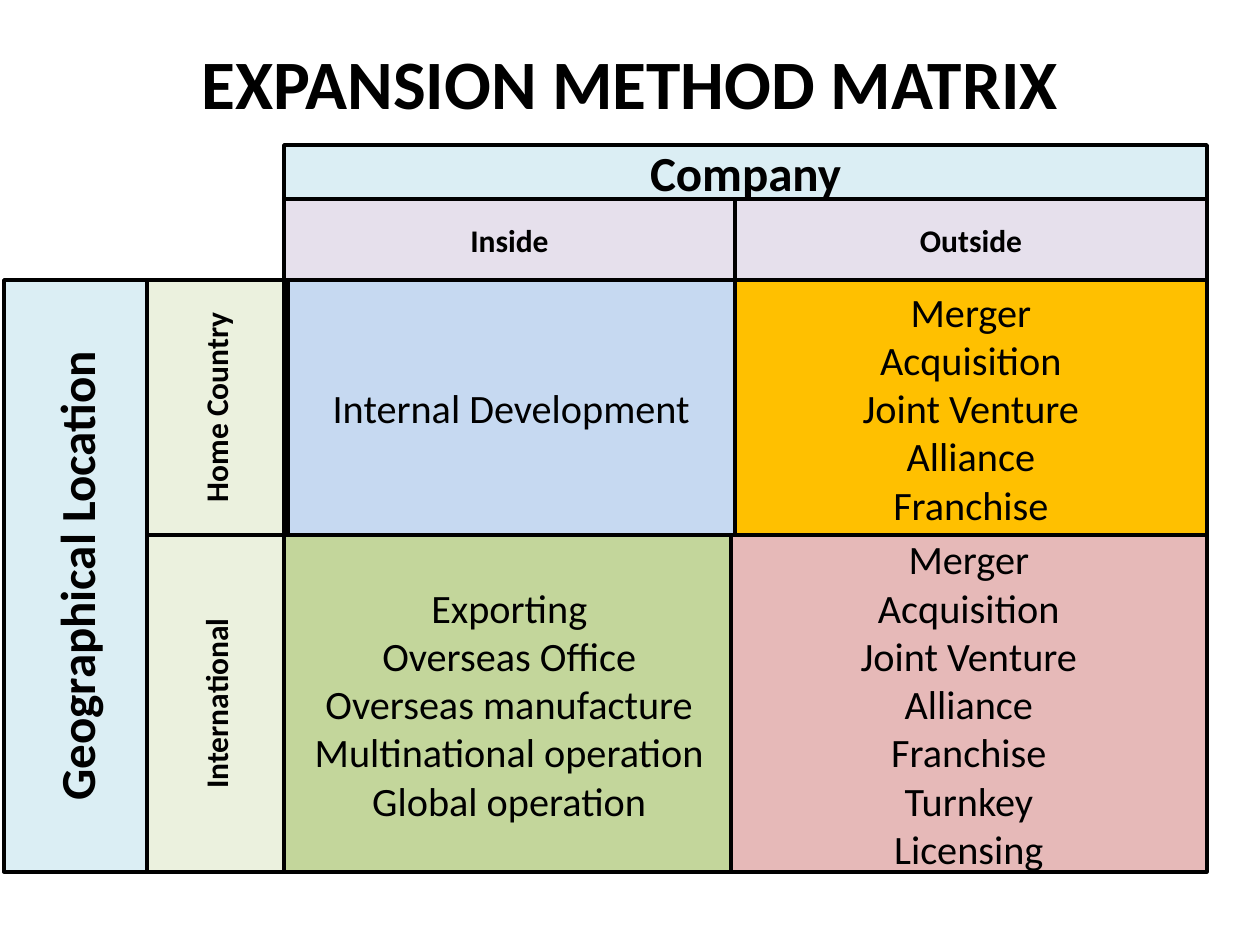
from dataclasses import dataclass

from pptx import Presentation
from pptx.dml.color import RGBColor
from pptx.enum.shapes import MSO_SHAPE
from pptx.enum.text import MSO_ANCHOR, PP_ALIGN
from pptx.util import Pt

RECTANGLE = MSO_SHAPE.RECTANGLE
MIDDLE = MSO_ANCHOR.MIDDLE
CENTER = PP_ALIGN.CENTER

EMU_PER_PX = 914400 / 126
SLIDE_WIDTH, SLIDE_HEIGHT = 1260, 945


@dataclass(frozen=True)
class Theme:
    font: str = "Calibri"
    ink: str = "000000"
    axis: str = "DBEEF4"
    column: str = "E6E0EC"
    row: str = "EBF1DE"
    home_inside: str = "C6D9F1"
    home_outside: str = "FFC000"
    abroad_inside: str = "C3D69B"
    abroad_outside: str = "E6B9B8"
    title_size: float = 39.6
    axis_size: int = 28
    header_size: int = 18
    body_size: int = 23
    line_width: int = 2


def px(length):
    return round(length * EMU_PER_PX)


class MatrixSlide:
    def __init__(self, slide, theme):
        self.slide = slide
        self.theme = theme

    def set_text(self, shape, lines, size, bold):
        frame = shape.text_frame
        frame.word_wrap = True
        frame.vertical_anchor = MIDDLE
        font_format = {"name": self.theme.font, "size": Pt(size), "bold": bold}
        for index, line in enumerate(lines):
            paragraph = frame.add_paragraph() if index else frame.paragraphs[0]
            paragraph.alignment = CENTER
            run = paragraph.add_run()
            run.text = line
            for name, value in font_format.items():
                setattr(run.font, name, value)
            run.font.color.rgb = RGBColor.from_string(self.theme.ink)

    def title(self, text, left, top, width, height):
        box = self.slide.shapes.add_textbox(*map(px, (left, top, width, height)))
        self.set_text(box, [text], self.theme.title_size, True)

    def cell(self, lines, edges, fill, size, bold=False, upward=False):
        left, top, right, bottom = edges
        shape = self.slide.shapes.add_shape(
            RECTANGLE, px(left), px(top), px(right - left), px(bottom - top))
        shape.shadow.inherit = False
        shape.fill.solid()
        shape.fill.fore_color.rgb = RGBColor.from_string(fill)
        shape.line.color.rgb = RGBColor.from_string(self.theme.ink)
        shape.line.width = Pt(self.theme.line_width)
        self.set_text(shape, lines, size, bold)
        if upward:
            shape.element.txBody.bodyPr.set("vert", "vert270")

    def header(self, text, edges, fill, size, upward=False):
        self.cell([text], edges, fill, size, bold=True, upward=upward)


def main():
    theme = Theme()
    presentation = Presentation()
    presentation.slide_width = px(SLIDE_WIDTH)
    presentation.slide_height = px(SLIDE_HEIGHT)
    slide = presentation.slides.add_slide(presentation.slide_layouts[6])
    matrix = MatrixSlide(slide, theme)

    # Grid edges
    axis_left, row_left, grid_left, grid_middle, grid_right = 4, 147, 284, 735, 1207
    axis_top, column_top, grid_top, grid_split, grid_bottom = 145, 199, 280, 535, 872
    nudge = 4  # small offset of two cells from the grid

    matrix.title("EXPANSION METHOD MATRIX", 63, 38, 1134, 88)

    # Expansion methods
    partnerships = ["Merger", "Acquisition", "Joint Venture", "Alliance", "Franchise"]
    exports = ["Exporting", "Overseas Office", "Overseas manufacture",
               "Multinational operation", "Global operation"]
    methods = [
        (["Internal Development"],
         (grid_left + nudge, grid_top, grid_middle, grid_split), theme.home_inside),
        (exports,
         (grid_left, grid_split, grid_middle, grid_bottom), theme.abroad_inside),
        (partnerships + ["Turnkey", "Licensing"],
         (grid_middle - nudge, grid_split, grid_right, grid_bottom), theme.abroad_outside),
        (partnerships,
         (grid_middle, grid_top, grid_right, grid_split), theme.home_outside),
    ]
    for lines, edges, fill in methods:
        matrix.cell(lines, edges, fill, theme.body_size)

    # Axis headers
    matrix.header("Geographical Location", (axis_left, grid_top, row_left, grid_bottom),
                  theme.axis, theme.axis_size, upward=True)
    matrix.header("Company", (grid_left, axis_top, grid_right, column_top),
                  theme.axis, theme.axis_size)

    # Column headers
    for text, left, right in [("Inside", grid_left, grid_middle),
                              ("Outside", grid_middle, grid_right)]:
        matrix.header(text, (left, column_top, right, grid_top),
                      theme.column, theme.header_size)

    # Row headers
    for text, top, bottom in [("Home Country", grid_top, grid_split),
                              ("International", grid_split, grid_bottom)]:
        matrix.header(text, (row_left, top, grid_left, bottom),
                      theme.row, theme.header_size, upward=True)

    presentation.save("out.pptx")


if __name__ == "__main__":
    main()
